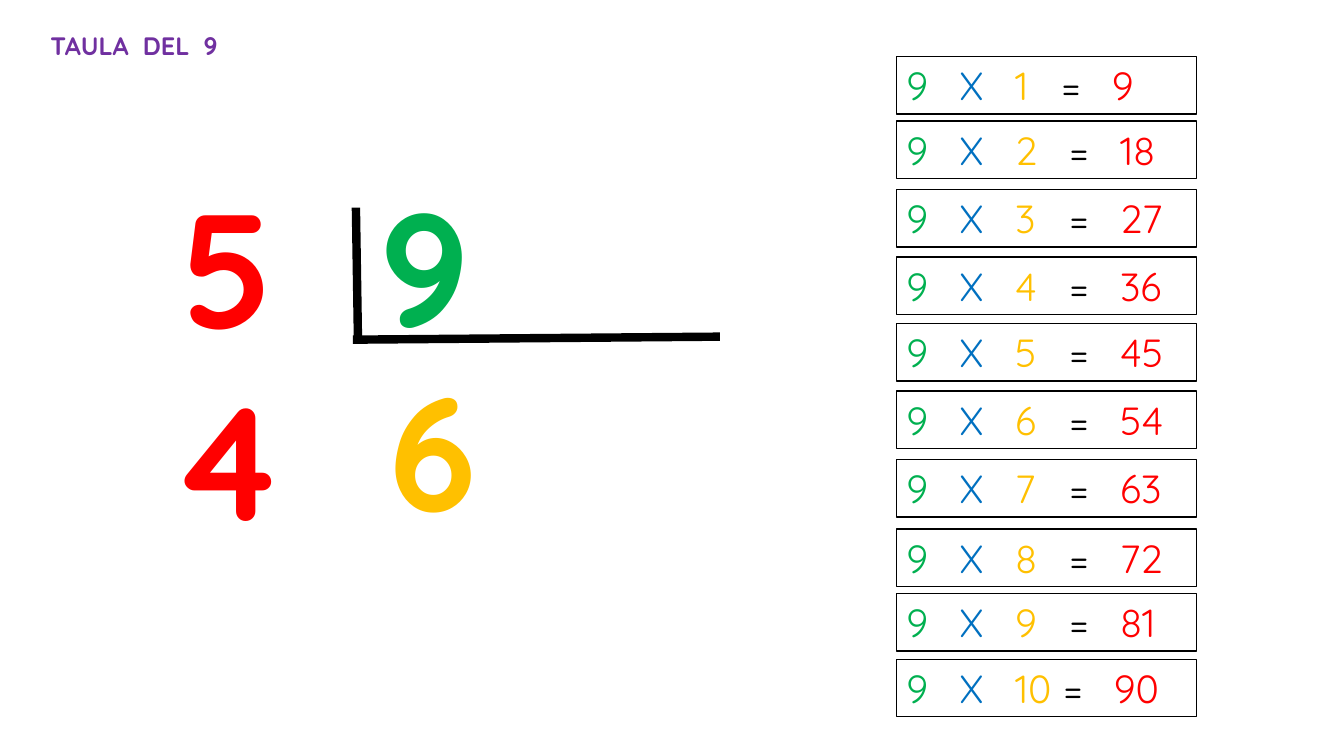
import dataclasses

import lxml.etree
import pptx
import pptx.dml.color
import pptx.enum.shapes
import pptx.enum.text
import pptx.oxml.ns
import pptx.util

Inches = pptx.util.Inches
Align = pptx.enum.text.PP_ALIGN
Anchor = pptx.enum.text.MSO_ANCHOR


@dataclasses.dataclass(frozen=True)
class Theme:
    font: str = "Quicksand"
    purple: str = "7030A0"
    green: str = "00B050"
    blue: str = "0070C0"
    yellow: str = "FFC000"
    red: str = "FF0000"
    black: str = "000000"
    white: str = "FFFFFF"
    title_size: int = 18
    row_size: int = 28
    digit_size: int = 115
    frame_width: int = 1
    bracket_width: int = 6


@dataclasses.dataclass(frozen=True)
class Digit:
    text: str
    color: str
    left: float
    top: float
    width: float


@dataclasses.dataclass(frozen=True)
class Stroke:
    start: tuple[float, float]
    end: tuple[float, float]


@dataclasses.dataclass(frozen=True)
class TableRow:
    factor: int
    top: float
    shift: float = 0  # moves the last two columns for narrow or wide factors


THEME = Theme()
TABLE_OF = 9
ROW_LEFT, ROW_WIDTH, ROW_HEIGHT = 8.89, 2.98, 0.57
FACTOR_TABS = (0.53, 1.08)
RESULT_TABS = (1.62, 2.12)

DIGITS = [
    Digit("9", THEME.green, 3.62, 1.61, 1.18),
    Digit("54", THEME.red, 1.19, 1.61, 2.14),
    Digit("6", THEME.yellow, 3.71, 3.43, 1.18),
]
BRACKET = [
    Stroke((3.53, 2.06), (3.55, 3.35)),
    Stroke((3.5, 3.37), (7.14, 3.34)),
]
ROWS = [
    TableRow(1, 0.56, -0.08),
    TableRow(2, 1.2),
    TableRow(3, 1.88),
    TableRow(4, 2.55),
    TableRow(5, 3.21),
    TableRow(6, 3.88),
    TableRow(7, 4.56),
    TableRow(8, 5.25),
    TableRow(9, 5.89),
    TableRow(10, 6.54, -0.06),
]


def rgb(color: str) -> pptx.dml.color.RGBColor:
    return pptx.dml.color.RGBColor.from_string(color)


def set_attributes(target: object, values: dict[str, object]) -> None:
    for name, value in values.items():
        setattr(target, name, value)


def format_frame(frame: object, anchor: Anchor) -> None:
    set_attributes(frame, {
        "word_wrap": True,
        "auto_size": pptx.enum.text.MSO_AUTO_SIZE.SHAPE_TO_FIT_TEXT,
        "vertical_anchor": anchor,
    })


def add_run(paragraph: object, text: str, color: str, size: int, bold: bool) -> None:
    run = paragraph.add_run()
    run.text = text
    set_attributes(run.font, {
        "name": THEME.font, "size": pptx.util.Pt(size), "bold": bold,
    })
    run.font.color.rgb = rgb(color)


def add_title(slide: object, text: str) -> None:
    title = slide.shapes.title
    set_attributes(title, {
        "left": Inches(0.4), "top": Inches(0.25),
        "width": Inches(2.63), "height": Inches(0.4),
    })
    format_frame(title.text_frame, Anchor.TOP)
    paragraph = title.text_frame.paragraphs[0]
    paragraph.alignment = Align.LEFT
    add_run(paragraph, text, THEME.purple, THEME.title_size, True)


def add_digit(slide: object, digit: Digit) -> None:
    box = slide.shapes.add_textbox(
        Inches(digit.left), Inches(digit.top), Inches(digit.width), Inches(2.04))
    format_frame(box.text_frame, Anchor.TOP)
    paragraph = box.text_frame.paragraphs[0]
    paragraph.alignment = Align.CENTER
    add_run(paragraph, digit.text, digit.color, THEME.digit_size, True)


def add_stroke(slide: object, stroke: Stroke) -> None:
    connector = slide.shapes.add_connector(
        pptx.enum.shapes.MSO_CONNECTOR.STRAIGHT,
        *map(Inches, stroke.start + stroke.end))
    connector.line.color.rgb = rgb(THEME.black)
    connector.line.width = pptx.util.Pt(THEME.bracket_width)
    lxml.etree.SubElement(
        connector._element.spPr, pptx.oxml.ns.qn("a:effectLst"))


def set_tabs(paragraph: object, stops: list[float]) -> None:
    tab_list = lxml.etree.SubElement(
        paragraph._p.get_or_add_pPr(), pptx.oxml.ns.qn("a:tabLst"))
    for stop in stops:
        lxml.etree.SubElement(
            tab_list, pptx.oxml.ns.qn("a:tab"), pos=str(Inches(stop)), algn="l")


def add_table_row(slide: object, row: TableRow) -> None:
    shape = slide.shapes.add_shape(
        pptx.enum.shapes.MSO_SHAPE.RECTANGLE,
        Inches(ROW_LEFT), Inches(row.top), Inches(ROW_WIDTH), Inches(ROW_HEIGHT))
    shape.shadow.inherit = False
    shape.fill.solid()
    shape.fill.fore_color.rgb = rgb(THEME.white)
    shape.line.color.rgb = rgb(THEME.black)
    shape.line.width = pptx.util.Pt(THEME.frame_width)
    format_frame(shape.text_frame, Anchor.TOP)

    paragraph = shape.text_frame.paragraphs[0]
    paragraph.alignment = Align.LEFT
    set_tabs(paragraph, [*FACTOR_TABS, *(stop + row.shift for stop in RESULT_TABS)])
    parts = [
        (f"{TABLE_OF}\t", THEME.green),
        ("X\t", THEME.blue),
        (f"{row.factor}\t", THEME.yellow),
        ("=\t", THEME.black),
        (f"{TABLE_OF * row.factor}", THEME.red),
    ]
    for text, color in parts:
        add_run(paragraph, text, color, THEME.row_size, False)


def main() -> None:
    presentation = pptx.Presentation()
    presentation.slide_width = Inches(13.33)
    presentation.slide_height = Inches(7.5)
    slide = presentation.slides.add_slide(
        presentation.slide_layouts.get_by_name("Title Only"))

    # Heading
    add_title(slide, f"TAULA  DEL  {TABLE_OF}")

    # Division
    for digit in DIGITS:
        add_digit(slide, digit)
    for stroke in BRACKET:
        add_stroke(slide, stroke)

    # Multiplication table
    for row in ROWS:
        add_table_row(slide, row)

    presentation.save("out.pptx")


if __name__ == "__main__":
    main()
